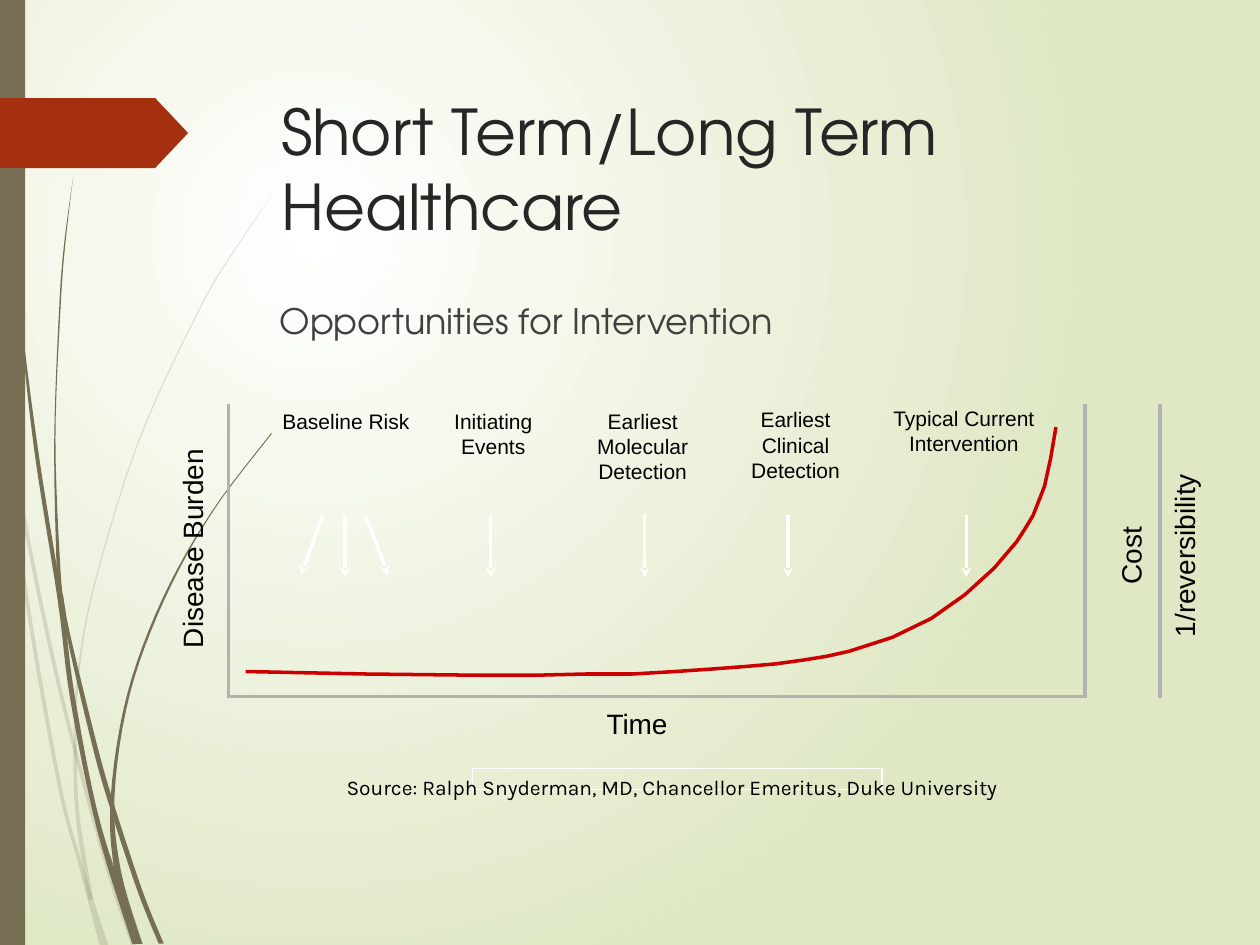
from collections import namedtuple
from dataclasses import dataclass

from lxml.etree import SubElement
from pptx import Presentation
from pptx.dml.color import RGBColor
from pptx.enum.shapes import MSO_CONNECTOR as Connector, MSO_SHAPE as Preset
from pptx.enum.text import MSO_ANCHOR as Anchor, MSO_AUTO_SIZE as AutoSize, PP_ALIGN as Align
from pptx.oxml import parse_xml
from pptx.oxml.ns import nsdecls, qn
from pptx.util import Pt

Box = namedtuple("Box", "left top width height")


@dataclass(frozen=True)
class Theme:
    """Colours, fonts and type sizes of the slide."""
    olive: str = "766F54"
    rust: str = "A53010"
    heading: str = "262626"
    body: str = "404040"
    black: str = "000000"
    white: str = "FFFFFF"
    meadow: str = "DFE8C4"
    axis: str = "B2B2B2"
    burden: str = "CC0000"
    display_font: str = "TeX Gyre Adventor"
    label_font: str = "Arial"
    source_font: str = "Karla"
    title_size: int = 36
    body_size: int = 20
    axis_size: int = 16
    label_size: int = 12
    spacer_size: int = 24
    stroke: float = 2
    hairline: float = 0.75


THEME = Theme()

PALE_BLADES = [
    [(203, 0, 0.7), (248.4, 5, 7.2), (305.3, 14.4, 16.6), (375.1, 28.8, 31),
     (429.8, 42.1, 44.3), (499, 61.2, 63.4), (540, 74.9, 77.8)],
    [(252, 5.8, 5.8), (338.4, 13.7, 15.8), (446.4, 32.4, 34.6), (493.2, 44.6, 46.8),
     (540, 56.9, 61.9)],
    [(110.2, 156.2, 156.2), (142.6, 133.9, 134.6), (176.4, 113.8, 114.5),
     (251.3, 79.2, 79.9), (332.6, 54, 54.7), (381.6, 44.6, 45.7),
     (420.5, 42.1, 43.9), (465.1, 43.2, 45.4), (514, 50.4, 53.3)],
]
DARK_BLADES = [
    [(0, 1.4, 2.2), (79.2, 3.6, 4.3), (167.8, 10.1, 10.8), (255.6, 19.4, 21.6),
     (343.4, 33.1, 35.6), (400.3, 40.3, 43.2), (473.8, 55.4, 58.3), (539.3, 75.6, 81.4)],
    [(339.8, 35.3, 36), (363.6, 38.2, 40.3), (425.5, 52.6, 55.4), (460.8, 62.6, 65.5),
     (509, 78.5, 81.4), (539.3, 90.7, 93.6)],
    [(101.5, 41.8, 41.8), (138.9, 36.7, 37.4), (176.4, 33.8, 34.6), (251.3, 31, 31.7),
     (326.2, 32.4, 34.6), (349.2, 33.8, 37.4)],
    [(247.7, 154.8, 155.5), (292.3, 121, 121.7), (342, 92.9, 94.3), (396.7, 72.7, 74.2),
     (454.3, 63.4, 65.5), (497.5, 65.5, 69.1), (539.3, 77.8, 81.4)],
]
BURDEN_CURVE = [
    (10.4, 152.8), (78.8, 154.2), (144.3, 154.9), (175.3, 154.9), (204.8, 154.2),
    (231.4, 154.2), (255.9, 152.8), (277.5, 151.3), (296.2, 149.9), (313.5, 148.4),
    (328.6, 146.3), (342.3, 144.1), (355.3, 141.2), (379.8, 133.3), (402.1, 122.5),
    (421.5, 108.8), (438.1, 93.7), (451, 78.6), (456.1, 70.7), (460.4, 63.5),
    (466.9, 46.9), (470.5, 30.4), (473.4, 13.1),
]
MILESTONES = [
    ("Baseline Risk", Box(21.2, -1.3, 93, 22), [(54.3, 42.1), (67.3, 67.3), (78.8, 91.8)]),
    ("Initiating Events", Box(105.4, -1.3, 93, 36), [(150.4, 150.4)]),
    ("Earliest Molecular Detection", Box(191.8, -1.3, 91, 50), [(238.3, 238.3)]),
    ("Earliest Clinical Detection", Box(282.6, -2, 84, 50), [(320.4, 320.4)]),
    ("Typical Current Intervention", Box(373.3, -2.8, 95, 50), [(422.2, 422.2)]),
]


def points(box):
    """Convert a box to lengths."""
    return [Pt(length) for length in box]


def inside(box, part):
    """Shift a part by the corner of its box."""
    return part._replace(left=box.left + part.left, top=box.top + part.top)


def write(paragraph, text, size, font, color, **layout):
    """Add a formatted run and set the paragraph layout."""
    run = paragraph.add_run()
    run.text = text
    run.font.color.rgb = RGBColor.from_string(color)
    for target, values in ((run.font, {"size": Pt(size), "name": font}), (paragraph, layout)):
        for attribute, value in values.items():
            setattr(target, attribute, value)


def paint(shape, color, alpha=None):
    """Fill a shape without outline or shadow."""
    shape.shadow.inherit = False
    shape.line.fill.background()
    shape.fill.solid()
    shape.fill.fore_color.rgb = RGBColor.from_string(color)
    if alpha:
        tint = shape._element.spPr.find(".//" + qn("a:srgbClr"))
        SubElement(tint, qn("a:alpha"), val=str(alpha * 1000))


def outline(slide, box, dots, close):
    """Build a freeform through dots relative to a box."""
    (first, *rest) = [(Pt(box.left + x), Pt(box.top + y)) for x, y in dots]
    builder = slide.shapes.build_freeform(*first, scale=1.0)
    builder.add_line_segments(rest, close=close)
    shape = builder.convert_to_shape()
    shape.shadow.inherit = False
    return shape


def rule(slide, box, start, end, color, arrow=False):
    """Draw a straight line, with an arrowhead if asked."""
    ends = [Pt(box[i] + spot[i]) for spot in (start, end) for i in (0, 1)]
    connector = slide.shapes.add_connector(Connector.STRAIGHT, *ends)
    connector.line.color.rgb = RGBColor.from_string(color)
    connector.line.width = Pt(THEME.stroke)
    if arrow:
        SubElement(connector.line._ln, qn("a:tailEnd"), type="stealth")
    SubElement(connector._element.spPr, qn("a:effectLst"))


def label(slide, box, lines, size, rotation=0):
    """Place centred lines of text in a wrapped box."""
    caption = slide.shapes.add_textbox(*points(box))
    caption.rotation = rotation
    frame = caption.text_frame
    frame.word_wrap = True
    for index, (text, layout) in enumerate(lines):
        paragraph = frame.add_paragraph() if index else frame.paragraphs[0]
        write(paragraph, text, size, THEME.label_font, THEME.black, alignment=Align.CENTER, **layout)


def smooth(knots, steps=6):
    """Interpolate knots with a Catmull-Rom spline."""
    padded = [knots[0], *knots, knots[-1]]
    rows = [
        tuple(b + t * (c - a + t * (2 * a - 5 * b + 4 * c - d + t * (3 * b - a - 3 * c + d))) / 2
              for a, b, c, d in zip(*padded[i:i + 4]))
        for i in range(len(knots) - 1) for t in (step / steps for step in range(steps))
    ]
    return rows + [knots[-1]]


def backdrop(slide, box):
    """Lay the gradient, grass blades, side band and marker."""
    stops = "".join(f'<a:gs pos="{spot}"><a:srgbClr val="{color}"/></a:gs>'
                    for spot, color in ((0, THEME.white), (100000, THEME.meadow)))
    fill = slide.background.fill
    fill.solid()
    solid = slide._element.cSld.find(".//" + qn("a:solidFill"))
    solid.getparent().replace(solid, parse_xml(
        f'<a:gradFill {nsdecls("a")} rotWithShape="1"><a:gsLst>{stops}</a:gsLst><a:path path="circle">'
        '<a:fillToRect l="50000" t="50000" r="100000" b="100000"/></a:path></a:gradFill>'))
    for blades, alpha in ((PALE_BLADES, 20), (DARK_BLADES, None)):
        for blade in map(smooth, blades):
            edges = [(l, y) for y, l, _ in blade] + [(r, y) for y, _, r in reversed(blade)]
            paint(outline(slide, box, edges, True), THEME.olive, alpha)
    band = slide.shapes.add_shape(Preset.RECTANGLE, *points(box._replace(width=14.4)))
    paint(band, THEME.olive)
    marker = slide.shapes.add_shape(Preset.PENTAGON, *points(inside(box, Box(0, 56, 107.5, 40))))
    marker.adjustments[0] = 0.47
    paint(marker, THEME.rust)


def heading(placeholder, box, text, size, color):
    """Move a placeholder and fill it with plain left-aligned text."""
    for side, length in zip(box._fields, points(box)):
        setattr(placeholder, side, length)
    frame = placeholder.text_frame
    for attribute, value in {"vertical_anchor": Anchor.TOP, "auto_size": AutoSize.NONE,
                             "word_wrap": True}.items():
        setattr(frame, attribute, value)
    paragraph = frame.paragraphs[0]
    write(paragraph, text, size, THEME.display_font, color, alignment=Align.LEFT, space_before=Pt(0))
    properties = paragraph._p.get_or_add_pPr()
    for attribute in ("marL", "indent"):
        properties.set(attribute, "0")
    SubElement(properties, qn("a:buNone"))


def burden_chart(slide, box):
    """Draw the axes, burden curve, axis names and milestones."""
    label(slide, inside(box, Box(-102, 69, 164, 27)), [("Disease Burden", {})], THEME.axis_size, 270)
    label(slide, inside(box, Box(9, 169, 450, 27)), [("Time", {})], THEME.axis_size)
    label(slide, inside(box, Box(464.7, 57.7, 134, 57.6)),
          [("Cost", {"space_after": Pt(16.6)}), ("1/reversibility", {"line_spacing": 0.7})],
          THEME.axis_size, 270)
    for x in (0.7, box.width, 533):
        rule(slide, box, (x, 0), (x, box.height), THEME.axis)
    rule(slide, box, (0.7, box.height - 1), (box.width, box.height - 1), THEME.axis)
    curve = outline(slide, box, BURDEN_CURVE, False)
    curve.fill.background()
    curve.line.color.rgb = RGBColor.from_string(THEME.burden)
    curve.line.width = Pt(THEME.stroke)
    for name, area, arrows in MILESTONES:
        label(slide, inside(box, area), [(name, {})], THEME.label_size)
        for start, end in arrows:
            rule(slide, box, (start, 63.5), (end, 99 if start == end else 97.5), THEME.white, True)


def source_note(slide, box):
    """Place the source line in its thin white frame."""
    note = slide.shapes.add_shape(Preset.RECTANGLE, *points(box))
    note.shadow.inherit = False
    note.fill.background()
    note.line.color.rgb = RGBColor.from_string(THEME.white)
    note.line.width = Pt(THEME.hairline)
    frame = note.text_frame
    frame.word_wrap = False
    frame.vertical_anchor = Anchor.MIDDLE
    for text, size, color in (
            ("Source: Ralph Snyderman, MD, Chancellor Emeritus, Duke University", THEME.label_size, THEME.black),
            (" ", THEME.spacer_size, THEME.olive)):
        write(frame.paragraphs[0], text, size, THEME.source_font, color, alignment=Align.CENTER)


def main():
    """Build the slide and save it."""
    deck = Presentation()
    deck.slide_width, deck.slide_height = Pt(720), Pt(540)
    slide = deck.slides.add_slide(deck.slide_layouts[1])
    backdrop(slide, Box(0, 0, 720, 540))
    heading(slide.shapes.title, Box(153.4, 49, 519, 101), "Short Term/Long Term Healthcare",
            THEME.title_size, THEME.heading)
    heading(slide.placeholders[1], Box(152.6, 167.8, 519, 297), "Opportunities for Intervention",
            THEME.body_size, THEME.body)
    burden_chart(slide, Box(130, 231, 490, 168))
    source_note(slide, Box(270, 439, 234, 12.2))
    deck.save("out.pptx")


if __name__ == "__main__":
    main()
